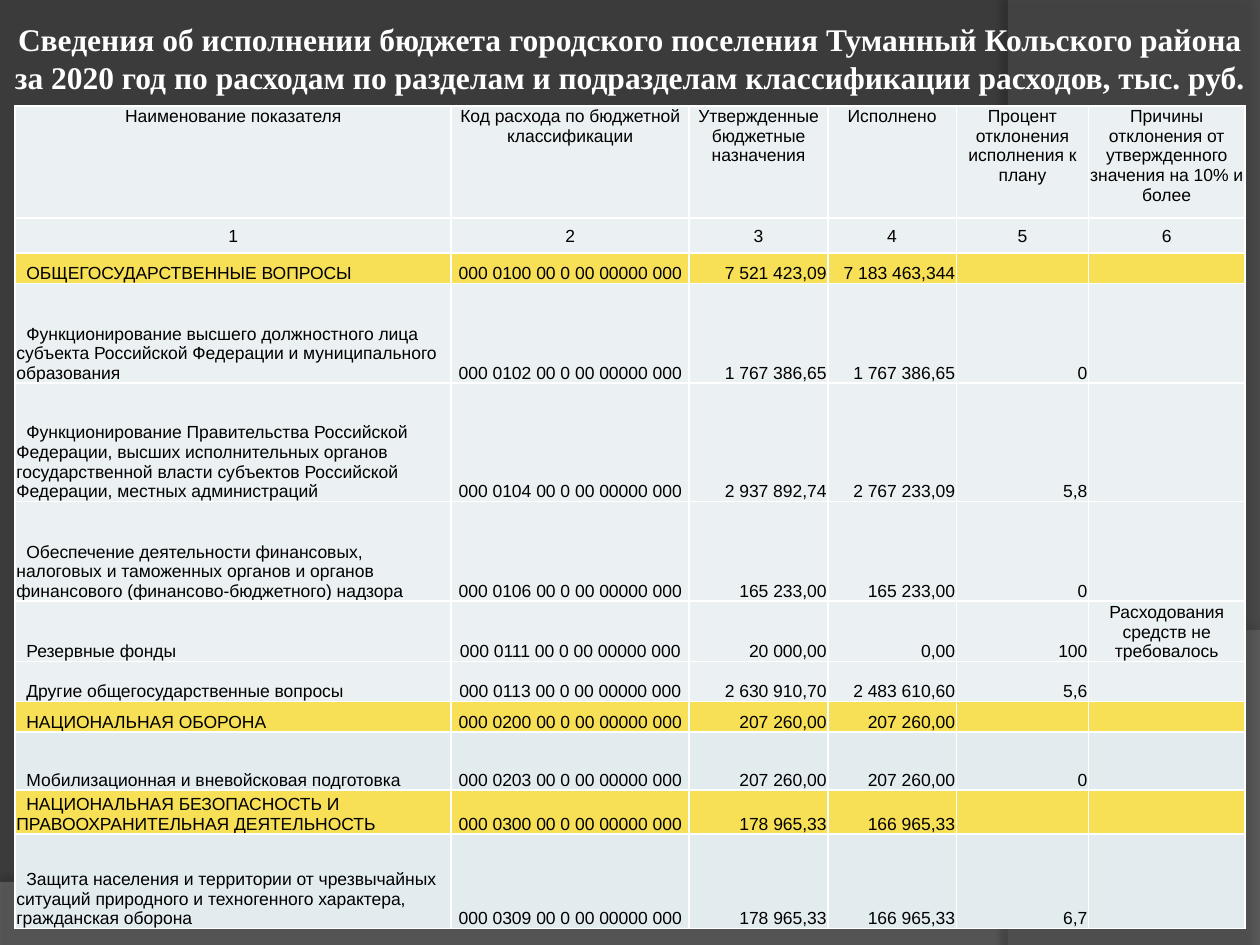
from typing import NamedTuple

from lxml.etree import SubElement
from pptx import Presentation
from pptx.dml.color import RGBColor
from pptx.enum.text import MSO_ANCHOR as Anchor, MSO_AUTO_SIZE as AutoSize, PP_ALIGN as Align
from pptx.oxml import parse_xml
from pptx.oxml.ns import nsdecls, qn
from pptx.util import Inches, Pt

WIDTH, HEIGHT = 10, 7.5
DARK, WHITE, BLACK = "3B3B3B", "FFFFFF", "000000"
PALE, BLUISH, YELLOW = "EBF0F2", "E2ECEF", "F7DF56"

TITLE = ("Сведения об исполнении бюджета городского поселения Туманный Кольского района "
         "за 2020 год по расходам по разделам и подразделам классификации расходов, тыс. руб.")
COLUMN_WIDTHS = (3.46, 1.89, 1.1, 1.02, 1.05, 1.24)
COLUMN_ALIGNS = (Align.LEFT, Align.CENTER, Align.RIGHT, Align.RIGHT, Align.RIGHT, Align.CENTER)
HEADINGS = ("Наименование показателя", "Код расхода по бюджетной классификации",
            "Утвержденные бюджетные назначения", "Исполнено",
            "Процент отклонения исполнения к плану",
            "Причины отклонения от утвержденного значения на 10% и более")


class Expense(NamedTuple):
    height: float
    fill: str
    name: str
    section: str
    approved: str
    spent: str
    deviation: str = ""
    reason: str = ""

    def texts(self) -> tuple:
        code = f"000 {self.section} 00 0 00 00000 000"
        return self.name, code, self.approved, self.spent, self.deviation, self.reason


class Wave(NamedTuple):
    points: list
    fill: str
    opacity: int
    shadow_opacity: int
    shadow_distance: float
    shadow_angle: int


EXPENSES = (
    Expense(0.24, YELLOW, "ОБЩЕГОСУДАРСТВЕННЫЕ ВОПРОСЫ", "0100", "7 521 423,09", "7 183 463,344"),
    Expense(0.79, PALE, "Функционирование высшего должностного лица субъекта Российской "
            "Федерации и муниципального образования",
            "0102", "1 767 386,65", "1 767 386,65", "0"),
    Expense(0.94, PALE, "Функционирование Правительства Российской Федерации, высших "
            "исполнительных органов государственной власти субъектов Российской Федерации, "
            "местных администраций", "0104", "2 937 892,74", "2 767 233,09", "5,8"),
    Expense(0.79, PALE, "Обеспечение деятельности финансовых, налоговых и таможенных органов "
            "и органов финансового (финансово-бюджетного) надзора",
            "0106", "165 233,00", "165 233,00", "0"),
    Expense(0.48, PALE, "Резервные фонды", "0111", "20 000,00", "0,00", "100",
            "Расходования средств не требовалось"),
    Expense(0.32, PALE, "Другие общегосударственные вопросы",
            "0113", "2 630 910,70", "2 483 610,60", "5,6"),
    Expense(0.24, YELLOW, "НАЦИОНАЛЬНАЯ ОБОРОНА", "0200", "207 260,00", "207 260,00"),
    Expense(0.46, BLUISH, "Мобилизационная и вневойсковая подготовка",
            "0203", "207 260,00", "207 260,00", "0"),
    Expense(0.35, YELLOW, "НАЦИОНАЛЬНАЯ БЕЗОПАСНОСТЬ И ПРАВООХРАНИТЕЛЬНАЯ ДЕЯТЕЛЬНОСТЬ",
            "0300", "178 965,33", "166 965,33"),
    Expense(0.75, BLUISH, "Защита населения и территории от чрезвычайных ситуаций природного "
            "и техногенного характера, гражданская оборона",
            "0309", "178 965,33", "166 965,33", "6,7"),
)


def rgb(color: str) -> RGBColor:
    return RGBColor.from_string(color)


def bezier(start, control1, control2, end, steps: int = 40) -> list:
    """Points along a cubic curve."""
    def at(t, axis):
        u = 1 - t
        return (u ** 3 * start[axis] + 3 * u * u * t * control1[axis]
                + 3 * u * t * t * control2[axis] + t ** 3 * end[axis])
    return [(at(i / steps, 0), at(i / steps, 1)) for i in range(steps + 1)]


def draw_wave(slide, wave: Wave) -> None:
    first, *rest = wave.points
    builder = slide.shapes.build_freeform(*first, scale=Inches(1))
    builder.add_line_segments(rest, close=True)
    shape = builder.convert_to_shape()
    shape.fill.solid()
    shape.fill.fore_color.rgb = rgb(wave.fill)
    shape.line.fill.background()
    shape.shadow.inherit = False
    properties = shape.element.spPr
    color = properties.find(qn("a:solidFill"))[0]
    SubElement(color, qn("a:alpha"), val=str(wave.opacity * 1000))
    properties.find(qn("a:effectLst")).append(parse_xml(
        f'<a:outerShdw {nsdecls("a")} blurRad="{Pt(4)}" dist="{Pt(wave.shadow_distance)}" '
        f'dir="{wave.shadow_angle * 60000}" rotWithShape="0"><a:srgbClr val="{BLACK}">'
        f'<a:alpha val="{wave.shadow_opacity * 1000}"/></a:srgbClr></a:outerShdw>'))


def write(frame, text: str, *, size: float, font: str, color: str, align: Align,
          bold: bool = False, indent: float = 0) -> None:
    paragraph = frame.paragraphs[0]
    paragraph.alignment = align
    properties = paragraph._p.get_or_add_pPr()
    if indent:
        properties.set("indent", str(Inches(indent)))
    if not text:  # keeps an empty cell from stretching its row
        SubElement(paragraph._p, qn("a:endParaRPr"), sz=str(int(size * 100)))
        return
    run = paragraph.add_run()
    run.text = text
    run.font.size, run.font.name, run.font.bold = Pt(size), font, bold
    run.font.color.rgb = rgb(color)


def draw_cell(cell, text: str, fill: str, align: Align, anchor: Anchor, indent: float = 0) -> None:
    cell.margin_left = cell.margin_right = cell.margin_top = Inches(0.01)
    cell.margin_bottom = 0
    cell.vertical_anchor = anchor
    cell.fill.solid()
    cell.fill.fore_color.rgb = rgb(fill)
    for position, side in enumerate(("lnL", "lnR", "lnT", "lnB")):
        cell._tc.tcPr.insert(position, parse_xml(
            f'<a:{side} {nsdecls("a")} w="{Pt(1)}"><a:solidFill><a:srgbClr val="{WHITE}"/>'
            f'</a:solidFill></a:{side}>'))
    write(cell.text_frame, text, size=10, font="Arial", color=BLACK, align=align, indent=indent)


def draw_table(slide) -> None:
    numbers = [str(n + 1) for n in range(len(HEADINGS))]
    heights = [0.89, 0.28] + [expense.height for expense in EXPENSES]
    table = slide.shapes.add_table(
        len(heights), len(COLUMN_WIDTHS), Inches(0.12), Inches(0.84),
        Inches(sum(COLUMN_WIDTHS)), Inches(sum(heights))).table
    table.first_row = table.horz_banding = False
    for column, width in zip(table.columns, COLUMN_WIDTHS):
        column.width = Inches(width)
    for row, height in zip(table.rows, heights):
        row.height = Inches(height)

    # Headings and column numbers
    for r, (texts, anchor) in enumerate(((HEADINGS, Anchor.TOP), (numbers, Anchor.MIDDLE))):
        for c, text in enumerate(texts):
            draw_cell(table.cell(r, c), text, PALE, Align.CENTER, anchor)

    # Expenses, with the name's first line indented
    for r, expense in enumerate(EXPENSES, start=2):
        for c, (text, align) in enumerate(zip(expense.texts(), COLUMN_ALIGNS)):
            draw_cell(table.cell(r, c), text, expense.fill, align, Anchor.BOTTOM,
                      indent=0.08 if c == 0 else 0)


def draw_title(slide) -> None:
    title = slide.shapes.title
    title.left = title.top = 0
    title.width, title.height = Inches(WIDTH), Inches(0.92)
    frame = title.text_frame
    frame.margin_left = frame.margin_right = frame.margin_top = frame.margin_bottom = Inches(0.05)
    frame.vertical_anchor, frame.word_wrap, frame.auto_size = Anchor.MIDDLE, True, AutoSize.NONE
    write(frame, TITLE, size=18, font="Times New Roman", color=WHITE, align=Align.CENTER, bold=True)
    slide.shapes.element.append(title.element)  # above the waves


def main() -> None:
    deck = Presentation()
    deck.slide_width, deck.slide_height = Inches(WIDTH), Inches(HEIGHT)
    slide = deck.slides.add_slide(deck.slide_layouts[5])
    slide.background.fill.solid()
    slide.background.fill.fore_color.rgb = rgb(DARK)

    # Background waves
    bottom = [(0, HEIGHT), (WIDTH, HEIGHT),
              *bezier((WIDTH, 5.2), (5.59, 7.29), (3.91, 7.19), (0, 7.05))]
    right = [(WIDTH, 0.02), (WIDTH, HEIGHT),
             *bezier((8.21, HEIGHT), (9.35, 6.19), (10.18, 3), (8, 0))]
    draw_wave(slide, Wave(bottom, "7F7F7F", 45, 35, 3.5, 270))
    draw_wave(slide, Wave(right, "5E5E5E", 40, 45, 4, 180))

    draw_title(slide)
    draw_table(slide)
    deck.save("out.pptx")


if __name__ == "__main__":
    main()
